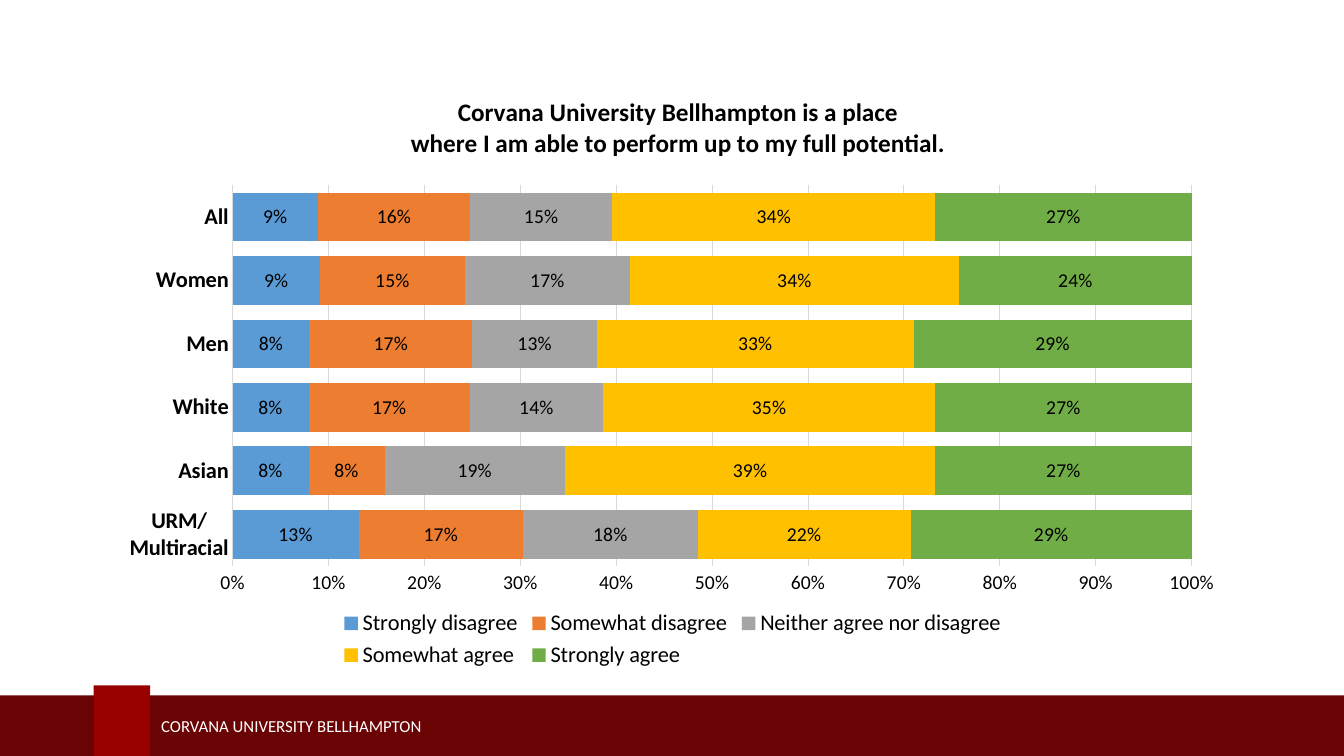
from pptx import Presentation
from pptx.chart.data import CategoryChartData
from pptx.dml.color import RGBColor
from pptx.enum.chart import XL_CHART_TYPE, XL_LABEL_POSITION, XL_LEGEND_POSITION, XL_TICK_MARK
from pptx.enum.shapes import MSO_SHAPE
from pptx.enum.text import MSO_ANCHOR, PP_ALIGN
from pptx.oxml import parse_xml
from pptx.oxml.ns import nsdecls, qn
from pptx.util import Inches, Pt

# Content
FONT = "Calibri"
FOOTER = "CORVANA UNIVERSITY BELLHAMPTON"
TITLE = ["Corvana University Bellhampton is a place",
         "where I am able to perform up to my full potential."]
GROUPS = ["URM/\nMultiracial", "Asian", "White", "Men", "Women", "All"]
ANSWERS = [
    ("Strongly disagree", "5B9BD5", (0.13, 0.08, 0.08, 0.08, 0.09, 0.09)),
    ("Somewhat disagree", "ED7D31", (0.17, 0.08, 0.17, 0.17, 0.15, 0.16)),
    ("Neither agree nor disagree", "A5A5A5", (0.18, 0.19, 0.14, 0.13, 0.17, 0.15)),
    ("Somewhat agree", "FFC000", (0.22, 0.39, 0.35, 0.33, 0.34, 0.34)),
    ("Strongly agree", "70AD47", (0.29, 0.27, 0.27, 0.29, 0.24, 0.27)),
]
WIDTH, HEIGHT = 13.33, 7.5
BAND_TOP, TAB_TOP = 6.9, 6.8


def color(value):
    return RGBColor.from_string(value)


def style_font(font, size, bold=False, fill="000000"):
    font.name = FONT
    font.size = Pt(size)
    font.bold = bold
    font.color.rgb = color(fill)


def add_block(slide, left, top, width, fill):
    """Add a plain rectangle that reaches the bottom of the slide."""
    block = slide.shapes.add_shape(MSO_SHAPE.RECTANGLE, Inches(left), Inches(top),
                                   Inches(width), Inches(HEIGHT - top))
    block.shadow.inherit = False
    block.fill.solid()
    block.fill.fore_color.rgb = color(fill)
    block.line.fill.background()


def set_layout(element, index, target="", **shares):
    """Place a chart part by shares of the chart's size."""
    for layout in element.findall(qn("c:layout")):
        element.remove(layout)
    inner = f'<c:layoutTarget val="{target}"/>' if target else ""
    modes = "".join(f'<c:{key}Mode val="edge"/>' for key in shares if key in "xy")
    values = "".join(f'<c:{key} val="{share}"/>' for key, share in shares.items())
    element.insert(index, parse_xml(
        f'<c:layout {nsdecls("c")}><c:manualLayout>{inner}{modes}{values}'
        "</c:manualLayout></c:layout>"))


def add_footer(slide):
    add_block(slide, 0, BAND_TOP, WIDTH, "690304")
    add_block(slide, 0.93, TAB_TOP, 0.56, "990000")
    box = slide.shapes.add_textbox(Inches(1.5), Inches(7.05), Inches(5.27), Inches(0.3))
    box.text_frame.word_wrap = True
    box.text_frame.vertical_anchor = MSO_ANCHOR.MIDDLE
    run = box.text_frame.paragraphs[0].add_run()
    run.text = FOOTER
    style_font(run.font, 12, fill="FFFFFF")


def add_survey_chart(slide):
    data = CategoryChartData(number_format="0%")
    data.categories = GROUPS
    for name, _, shares in ANSWERS:
        data.add_series(name, shares)
    chart = slide.shapes.add_chart(XL_CHART_TYPE.BAR_STACKED_100, Inches(0.42), Inches(0.68),
                                   Inches(12.5), Inches(6), data).chart
    style_font(chart.font, 10)

    # Title
    frame = chart.chart_title.text_frame
    for index, line in enumerate(TITLE):
        paragraph = frame.add_paragraph() if index else frame.paragraphs[0]
        paragraph.alignment = PP_ALIGN.CENTER
        run = paragraph.add_run()
        run.text = line
        style_font(run.font, 18, bold=True)
    chart.chart_title.include_in_layout = False
    set_layout(chart.element.find(".//" + qn("c:title")), 1, x=0.29, y=0.04)

    # Bars and their labels
    plot = chart.plots[0]
    plot.gap_width, plot.overlap = 30, 100
    plot.vary_by_categories = False
    for series, (_, fill, _) in zip(plot.series, ANSWERS):
        series.format.fill.solid()
        series.format.fill.fore_color.rgb = color(fill)
        labels = series.data_labels
        labels.show_value = True
        labels.position = XL_LABEL_POSITION.CENTER
        labels.number_format, labels.number_format_is_linked = "0%", False
        style_font(labels.font, 14)
    set_layout(chart.element.find(".//" + qn("c:plotArea")), 0, "inner",
               x=0.151, y=0.193, w=0.761, h=0.63)

    # Axes
    groups, percent = chart.category_axis, chart.value_axis
    for axis, size in ((groups, 16), (percent, 14)):
        axis.major_tick_mark = axis.minor_tick_mark = XL_TICK_MARK.NONE
        style_font(axis.tick_labels.font, size, bold=axis is groups)
    percent.has_major_gridlines = True
    percent.minimum_scale, percent.maximum_scale, percent.major_unit = 0, 1, 0.1
    percent.tick_labels.number_format = "0%"
    percent.tick_labels.number_format_is_linked = False
    percent.format.line.fill.background()
    for line in (groups.format.line, percent.major_gridlines.format.line):
        line.color.rgb = color("D9D9D9")
        line.width = Pt(0.75)

    # Legend
    chart.has_legend = True
    chart.legend.position = XL_LEGEND_POSITION.BOTTOM
    chart.legend.include_in_layout = False
    style_font(chart.legend.font, 16)


def main():
    presentation = Presentation()
    presentation.slide_width, presentation.slide_height = Inches(WIDTH), Inches(HEIGHT)
    slide = presentation.slides.add_slide(presentation.slide_layouts[6])
    add_footer(slide)
    add_survey_chart(slide)
    presentation.save("out.pptx")


if __name__ == "__main__":
    main()
